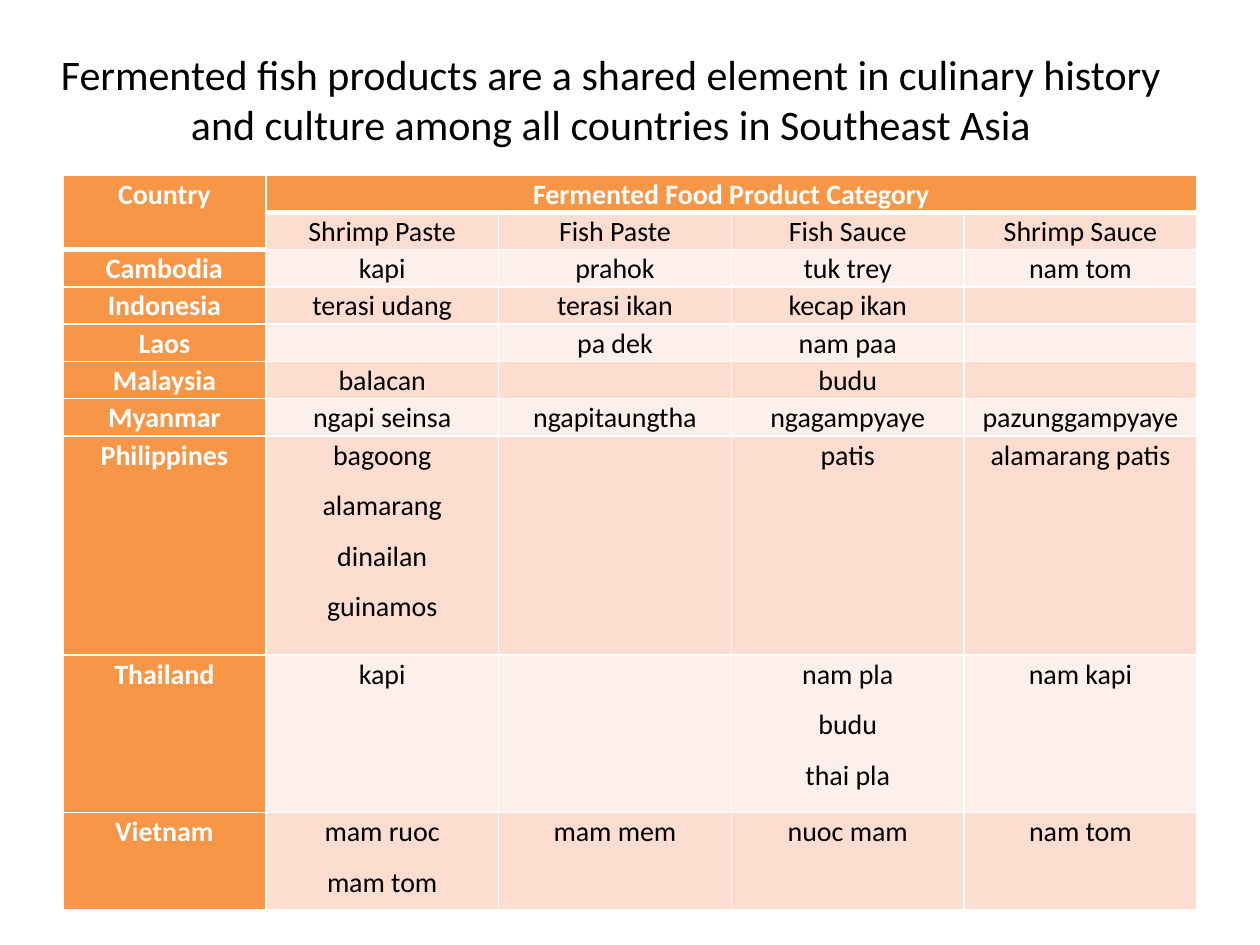
from lxml import etree
from pptx import Presentation
from pptx.dml.color import RGBColor
from pptx.enum import text
from pptx.oxml import ns
from pptx.util import Inches, Pt

TITLE = ("Fermented fish products are a shared element in culinary history "
         "and culture among all countries in Southeast Asia")
CATEGORIES = ["Shrimp Paste", "Fish Paste", "Fish Sauce", "Shrimp Sauce"]
# Each product cell is a list of names, one paragraph each.
COUNTRIES = [
    ("Cambodia", ["kapi"], ["prahok"], ["tuk trey"], ["nam tom"]),
    ("Indonesia", ["terasi udang"], ["terasi ikan"], ["kecap ikan"], []),
    ("Laos", [], ["pa dek"], ["nam paa"], []),
    ("Malaysia", ["balacan"], [], ["budu"], []),
    ("Myanmar", ["ngapi seinsa"], ["ngapitaungtha"], ["ngagampyaye"], ["pazunggampyaye"]),
    ("Philippines", ["bagoong", "alamarang", "dinailan", "guinamos"], [],
     ["patis"], ["alamarang patis"]),
    ("Thailand", ["kapi"], [], ["nam pla", "budu", "thai pla"], ["nam kapi"]),
    ("Vietnam", ["mam ruoc", "mam tom"], ["mam mem"], ["nuoc mam"], ["nam tom"]),
]
ORANGE, DARK_BAND, LIGHT_BAND = "F79646", "FCDDCF", "FDEFE9"
WHITE, BLACK = "FFFFFF", "000000"
LEFT, TOP, WIDTH, HEIGHT = 0.5, 1.39, 9, 5.83
COUNTRY_WIDTH = 1.61
TALL_ROWS = [1.74, 1.25, 0.77]
CELL_SIZE = 16


def color(value):
    return RGBColor.from_string(value)


def write(frame, lines, size=CELL_SIZE, ink=BLACK, bold=False, spacing=None, after=0):
    for index, line in enumerate(lines):
        para = frame.add_paragraph() if index else frame.paragraphs[0]
        para.alignment = text.PP_ALIGN.CENTER
        para.line_spacing = spacing
        para.space_after = Pt(after)
        span = para.add_run()
        span.text = line
        span.font.name = "Calibri"
        span.font.size = Pt(size)
        span.font.bold = bold
        span.font.color.rgb = color(ink)


def set_borders(cell, **widths):
    properties = cell._tc.get_or_add_tcPr()
    for side in "LRTB":
        line = etree.SubElement(properties, ns.qn(f"a:ln{side}"), w=str(Pt(widths.get(side, 1))))
        fill = etree.SubElement(line, ns.qn("a:solidFill"))
        etree.SubElement(fill, ns.qn("a:srgbClr"), val=WHITE)


def fill_cell(cell, lines, fill, heading, **borders):
    cell.margin_left = cell.margin_right = Inches(0.07)
    cell.margin_top = cell.margin_bottom = 0
    set_borders(cell, **borders)
    cell.fill.solid()
    cell.fill.fore_color.rgb = color(fill)
    if lines:
        write(cell.text_frame, lines, ink=WHITE if heading else BLACK, bold=heading,
              spacing=1.07, after=8)
    else:
        # An empty cell still needs the small size, or it stretches its row.
        para = cell.text_frame.paragraphs[0]
        etree.SubElement(para._p, ns.qn("a:endParaRPr"), sz=str(CELL_SIZE * 100))


def add_product_table(slide):
    rows = [
        [["Country"], ["Fermented Food Product Category"], [], [], []],
        [[]] + [[name] for name in CATEGORIES],
    ] + [[[country], *products] for country, *products in COUNTRIES]
    table = slide.shapes.add_table(len(rows), len(rows[0]), Inches(LEFT), Inches(TOP),
                                   Inches(WIDTH), Inches(HEIGHT)).table

    for index, column in enumerate(table.columns):
        category_width = (WIDTH - COUNTRY_WIDTH) / len(CATEGORIES)
        column.width = Inches(category_width if index else COUNTRY_WIDTH)
    short_count = len(rows) - len(TALL_ROWS)
    short_height = (HEIGHT - sum(TALL_ROWS)) / short_count
    for row, height in zip(table.rows, [short_height] * short_count + TALL_ROWS):
        row.height = Inches(height)

    for r, row in enumerate(rows):
        band = DARK_BAND if r % 2 else LIGHT_BAND
        for c, lines in enumerate(row):
            heading = r == 0 or c == 0
            header_end = 0 if c else 1  # the Country heading is two rows tall
            fill_cell(table.cell(r, c), lines, ORANGE if heading else band, heading,
                      T=3 if r == header_end + 1 else 1,
                      B=3 if r <= header_end else 1)
    table.cell(0, 0).merge(table.cell(1, 0))
    table.cell(0, 1).merge(table.cell(0, len(CATEGORIES)))


def main():
    deck = Presentation()
    deck.slide_width, deck.slide_height = Inches(10), Inches(7.5)
    slide = deck.slides.add_slide(deck.slide_layouts[6])
    title = slide.shapes.add_textbox(Inches(0.35), Inches(0.32), Inches(9), Inches(0.93))
    title.text_frame.word_wrap = True
    title.text_frame.vertical_anchor = text.MSO_ANCHOR.MIDDLE
    write(title.text_frame, [TITLE], size=24)
    add_product_table(slide)
    deck.save("out.pptx")


if __name__ == "__main__":
    main()
